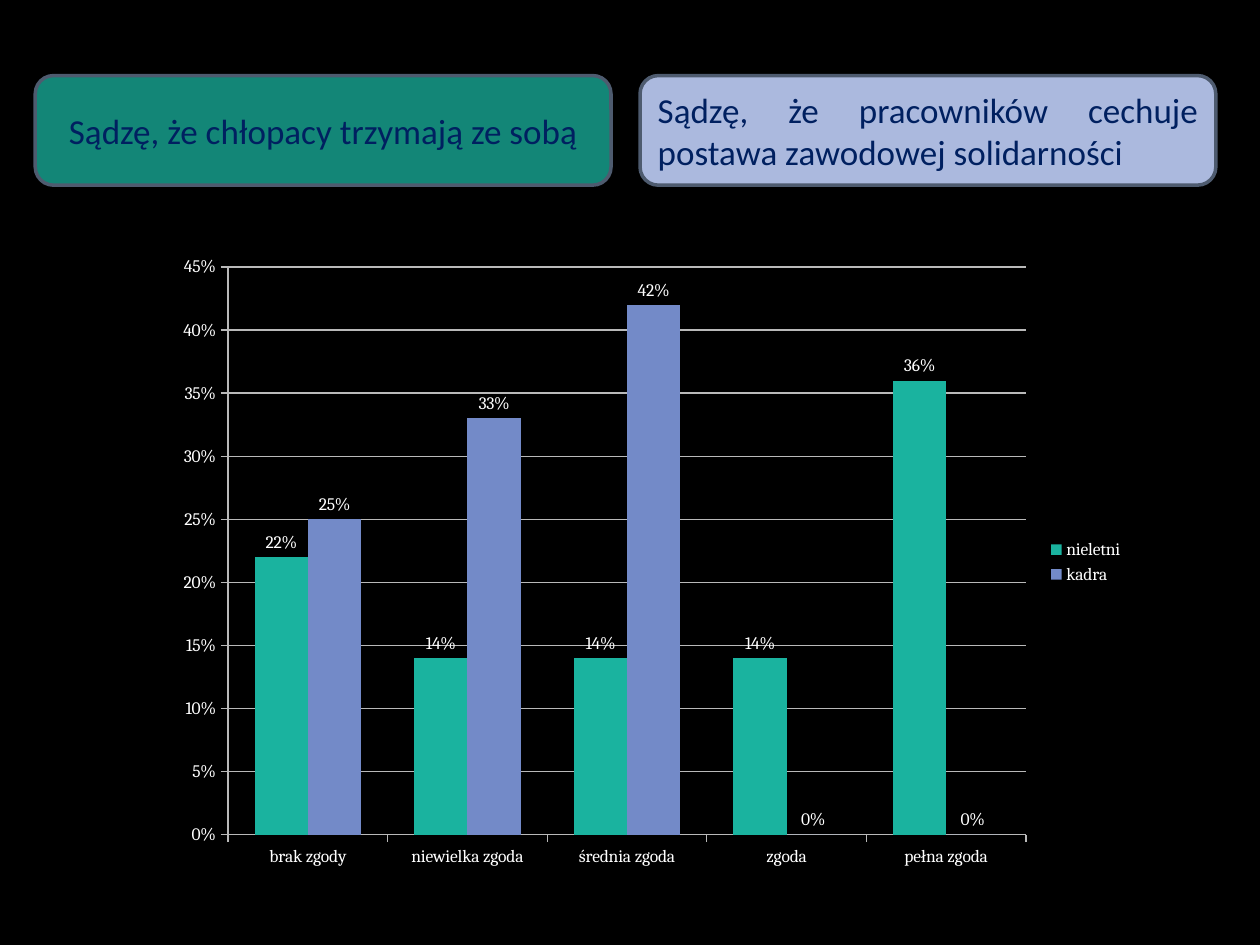
"""Build a slide comparing the solidarity of juveniles and staff."""
from dataclasses import dataclass

import pptx
import pptx.chart.data
import pptx.dml.color
import pptx.enum.chart
import pptx.enum.shapes
import pptx.enum.text
import pptx.util

Inches = pptx.util.Inches
Pt = pptx.util.Pt
Align = pptx.enum.text.PP_ALIGN

COLORS = {
    "background": "000000",
    "navy": "002060",
    "slate": "4E5B6F",
    "teal_dark": "138677",
    "blue_light": "ABB9DE",
    "teal": "1AB39F",
    "blue": "738AC8",
    "grid": "B9B9B9",
    "white": "FFFFFF",
}


@dataclass
class Statement:
    """A survey statement in a rounded box."""

    text: str
    left: float
    fill: str
    align: Align


@dataclass
class Group:
    """Answers of one group of respondents."""

    name: str
    shares: tuple[float, ...]
    color: str


STATEMENTS = [
    Statement("Sądzę, że chłopacy trzymają ze sobą", 0.28, "teal_dark", Align.CENTER),
    Statement("Sądzę, że pracowników cechuje postawa zawodowej solidarności",
              5.08, "blue_light", Align.JUSTIFY),
]
ANSWERS = ["brak zgody", "niewielka zgoda", "średnia zgoda", "zgoda", "pełna zgoda"]
GROUPS = [
    Group("nieletni", (0.22, 0.14, 0.14, 0.14, 0.36), "teal"),
    Group("kadra", (0.25, 0.33, 0.42, 0, 0), "blue"),
]


def rgb(name: str) -> pptx.dml.color.RGBColor:
    """Return the named colour."""
    return pptx.dml.color.RGBColor.from_string(COLORS[name])


def set_all(target, values: dict) -> None:
    """Set every attribute in values on target."""
    for name, value in values.items():
        setattr(target, name, value)


def set_fill(fill, color: str) -> None:
    """Make a fill solid in the named colour."""
    fill.solid()
    fill.fore_color.rgb = rgb(color)


def set_line(line, color: str, width: float) -> None:
    """Give a line its colour and its width in points."""
    set_fill(line.fill, color)
    line.width = Pt(width)


def set_font(font, name: str, size: float, color: str) -> None:
    """Give a font its face, size and colour."""
    set_all(font, {"name": name, "size": Pt(size), "bold": False})
    font.color.rgb = rgb(color)


def add_statement(page, statement: Statement) -> None:
    """Draw one statement box."""
    box = page.shapes.add_shape(
        pptx.enum.shapes.MSO_SHAPE.ROUNDED_RECTANGLE,
        Inches(statement.left), Inches(0.6), Inches(4.57), Inches(0.87))
    box.shadow.inherit = False
    set_fill(box.fill, statement.fill)
    set_line(box.line, "slate", 2)
    set_all(box.text_frame, {
        "word_wrap": True,
        "vertical_anchor": pptx.enum.text.MSO_ANCHOR.MIDDLE,
    })
    para = box.text_frame.paragraphs[0]
    para.alignment = statement.align
    span = para.add_run()
    span.text = statement.text
    set_font(span.font, "Calibri", 20, "navy")


def add_answer_chart(page, answers: list[str], groups: list[Group]) -> None:
    """Draw the clustered columns of answers by group."""
    data = pptx.chart.data.CategoryChartData(number_format="0%")
    data.categories = answers
    for group in groups:
        data.add_series(group.name, group.shares)
    chart = page.shapes.add_chart(
        pptx.enum.chart.XL_CHART_TYPE.COLUMN_CLUSTERED,
        Inches(1.3), Inches(1.94), Inches(7.72), Inches(5.04), data).chart
    set_all(chart, {"has_title": False, "has_legend": True})
    set_all(chart.legend, {
        "position": pptx.enum.chart.XL_LEGEND_POSITION.RIGHT,
        "include_in_layout": False,
    })
    plot = chart.plots[0]
    set_all(plot, {"gap_width": 100, "overlap": 0, "vary_by_categories": False})
    for series, group in zip(plot.series, groups):
        set_fill(series.format.fill, group.color)
        series.invert_if_negative = False
        labels = series.data_labels
        set_all(labels, {
            "show_value": True,
            "number_format": "0%",
            "number_format_is_linked": False,
            "position": pptx.enum.chart.XL_LABEL_POSITION.OUTSIDE_END,
        })
        set_font(labels.font, "Cambria", 10, "white")
    for axis in (chart.category_axis, chart.value_axis):
        axis.major_tick_mark = pptx.enum.chart.XL_TICK_MARK.OUTSIDE
        set_line(axis.format.line, "grid", 0.75)
        set_font(axis.tick_labels.font, "Cambria", 10, "white")
    set_all(chart.value_axis, {
        "minimum_scale": 0,
        "maximum_scale": 0.45,
        "major_unit": 0.05,
        "has_major_gridlines": True,
    })
    set_all(chart.value_axis.tick_labels, {
        "number_format": "0%",
        "number_format_is_linked": False,
    })
    set_line(chart.value_axis.major_gridlines.format.line, "grid", 0.75)
    for font in (chart.font, chart.legend.font):
        set_font(font, "Cambria", 10, "white")


def main() -> None:
    """Build and save the deck."""
    deck = pptx.Presentation()
    set_all(deck, {"slide_width": Inches(10), "slide_height": Inches(7.5)})
    page = deck.slides.add_slide(deck.slide_layouts[6])
    set_fill(page.background.fill, "background")
    add_answer_chart(page, ANSWERS, GROUPS)
    for statement in STATEMENTS:
        add_statement(page, statement)
    deck.save("out.pptx")


if __name__ == "__main__":
    main()
